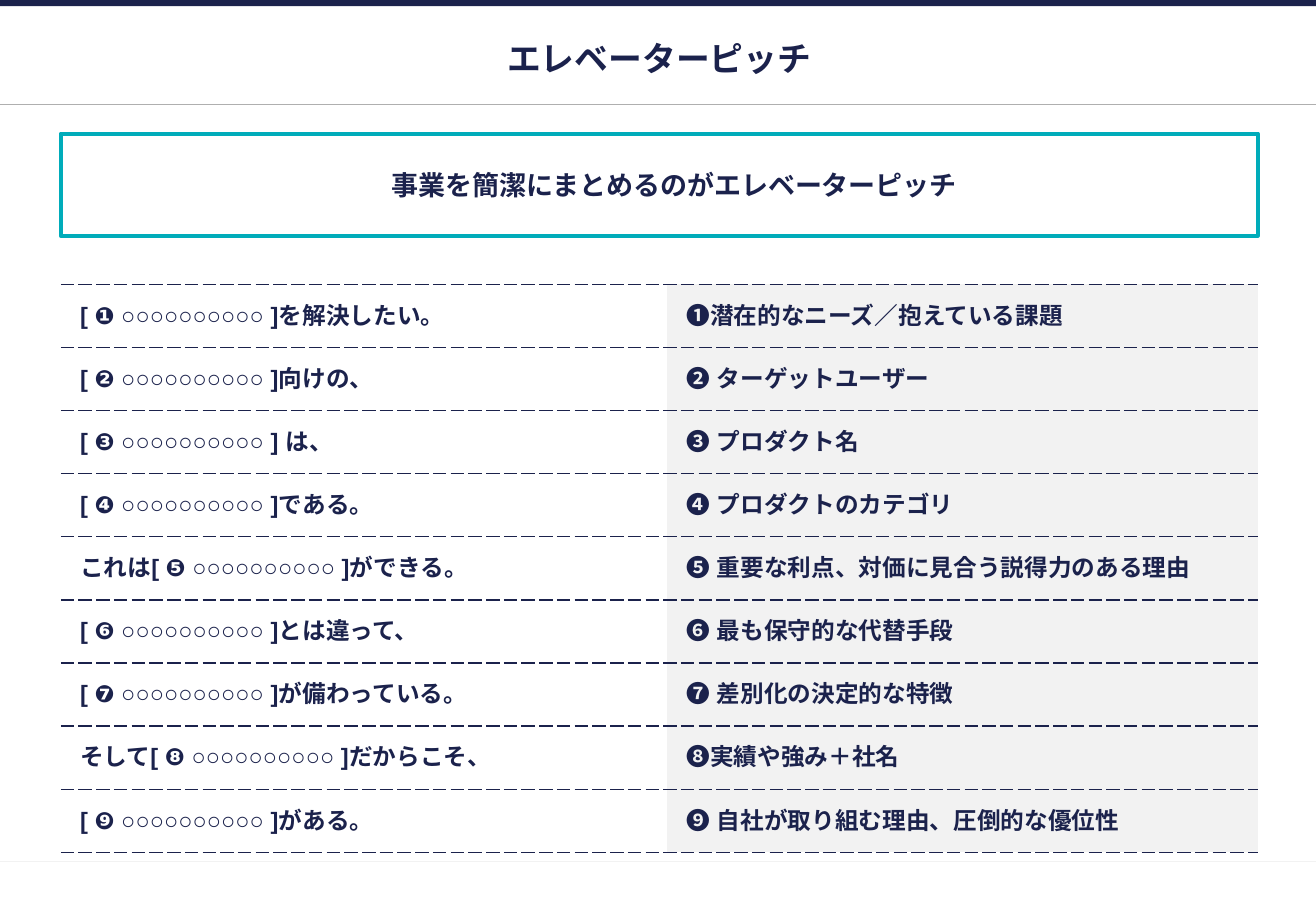
import pptx
import pptx.dml.color
import pptx.enum.lang
import pptx.enum.shapes
import pptx.enum.text
import pptx.oxml
import pptx.oxml.ns
import pptx.util

PX = 9144
NAVY = pptx.dml.color.RGBColor(0x1B, 0x22, 0x4C)
TEAL = pptx.dml.color.RGBColor(0x00, 0xAC, 0xBA)
GRAY = pptx.dml.color.RGBColor(0xAF, 0xAF, 0xAF)
PALE = pptx.dml.color.RGBColor(0xF2, 0xF2, 0xF2)
SLIDE_WIDTH, SLIDE_HEIGHT = 1083, 750
LEFT, WIDTH = 50, 985
MIDDLE = pptx.enum.text.MSO_ANCHOR.MIDDLE
CENTER = pptx.enum.text.PP_ALIGN.CENTER
BLANK = "○" * 10


def format_runs(paragraph, size):
    for run in paragraph.runs:
        run.font.name = "Arial"
        run.font.size = pptx.util.Pt(size)
        run.font.bold = True
        run.font.color.rgb = NAVY
        run.font.language_id = pptx.enum.lang.MSO_LANGUAGE_ID.JAPANESE
        east_asian = pptx.oxml.parse_xml(f'<a:ea {pptx.oxml.ns.nsdecls("a")} typeface="Arial"/>')
        run.font._element.append(east_asian)


def fill_placeholder(shape, text, top, height, inset_x, inset_y, size):
    shape.left, shape.top = LEFT * PX, top * PX
    shape.width, shape.height = WIDTH * PX, height * PX
    frame = shape.text_frame
    frame.text = text
    frame.word_wrap = True
    frame.auto_size = pptx.enum.text.MSO_AUTO_SIZE.NONE
    frame.vertical_anchor = MIDDLE
    frame.margin_left = frame.margin_right = inset_x * PX
    frame.margin_top = frame.margin_bottom = inset_y * PX
    paragraph = frame.paragraphs[0]
    paragraph.alignment = CENTER
    paragraph.space_before = pptx.util.Pt(0)
    format_runs(paragraph, size)


presentation = pptx.Presentation()
presentation.slide_width = SLIDE_WIDTH * PX
presentation.slide_height = SLIDE_HEIGHT * PX
slide = presentation.slides.add_slide(presentation.slide_layouts[1])

top_bar = slide.shapes.add_shape(
    pptx.enum.shapes.MSO_SHAPE.RECTANGLE, 0, 0, SLIDE_WIDTH * PX, 5 * PX)
top_bar.shadow.inherit = False
top_bar.fill.solid()
top_bar.fill.fore_color.rgb = NAVY
top_bar.line.fill.background()

for y, color in [(709, PALE), (86, GRAY)]:
    rule = slide.shapes.add_connector(
        pptx.enum.shapes.MSO_CONNECTOR.STRAIGHT, 0, y * PX, SLIDE_WIDTH * PX, y * PX)
    rule.line.color.rgb = color
    rule.line.width = pptx.util.Pt(0.75)
    rule._element.spPr.append(
        pptx.oxml.parse_xml(f'<a:effectLst {pptx.oxml.ns.nsdecls("a")}/>'))

fill_placeholder(slide.shapes.title, "エレベーターピッチ", 26, 43, 10, 5, 20)

message = slide.placeholders[1]
fill_placeholder(message, "事業を簡潔にまとめるのがエレベーターピッチ", 110, 84, 4, 8, 16)
message.line.color.rgb = TEAL
message.line.width = pptx.util.Pt(2.5)
message_paragraph = message.text_frame.paragraphs[0]
message_paragraph.space_after = pptx.util.Pt(2)
properties = message_paragraph._p.get_or_add_pPr()
properties.set("marL", str(50 * PX))
properties.set("indent", str(-25 * PX))
properties.append(pptx.oxml.parse_xml(f'<a:buNone {pptx.oxml.ns.nsdecls("a")}/>'))

pitch_rows = [
    (f"[ ❶ {BLANK} ]を解決したい。", "❶潜在的なニーズ／抱えている課題"),
    (f"[ ❷ {BLANK} ]向けの、", "❷ ターゲットユーザー"),
    (f"[ ❸ {BLANK} ] は、", "❸ プロダクト名"),
    (f"[ ❹ {BLANK} ]である。", "❹ プロダクトのカテゴリ"),
    (f"これは[ ❺ {BLANK} ]ができる。", "❺ 重要な利点、対価に見合う説得力のある理由"),
    (f"[ ❻ {BLANK} ]とは違って、", "❻ 最も保守的な代替手段"),
    (f"[ ❼ {BLANK} ]が備わっている。", "❼ 差別化の決定的な特徴"),
    (f"そして[ ❽ {BLANK} ]だからこそ、", "❽実績や強み＋社名"),
    (f"[ ❾ {BLANK} ]がある。", "❾ 自社が取り組む理由、圧倒的な優位性"),
]
row_height = 52
table = slide.shapes.add_table(
    len(pitch_rows), 2, LEFT * PX, 234 * PX, WIDTH * PX,
    row_height * len(pitch_rows) * PX).table
table.first_row = False
table.horz_banding = False
for column, width in zip(table.columns, (499, 486)):
    column.width = width * PX

dashed = f'<a:solidFill><a:srgbClr val="{NAVY}"/></a:solidFill><a:prstDash val="dash"/>'
borders = [("lnL", "<a:noFill/>"), ("lnR", "<a:noFill/>"), ("lnT", dashed), ("lnB", dashed)]
for row, texts in enumerate(pitch_rows):
    for column, text in enumerate(texts):
        cell = table.cell(row, column)
        cell.text_frame.text = text
        format_runs(cell.text_frame.paragraphs[0], 14)
        cell.vertical_anchor = MIDDLE
        cell.margin_left = cell.margin_right = 16 * PX
        cell.margin_top = cell.margin_bottom = 12 * PX
        cell_properties = cell._tc.get_or_add_tcPr()
        for tag, line in borders:
            cell_properties.append(pptx.oxml.parse_xml(
                f'<a:{tag} {pptx.oxml.ns.nsdecls("a")} w="12700">{line}</a:{tag}>'))
        if column == 1:
            cell.fill.solid()
            cell.fill.fore_color.rgb = PALE
        else:
            cell.fill.background()

presentation.save("out.pptx")
